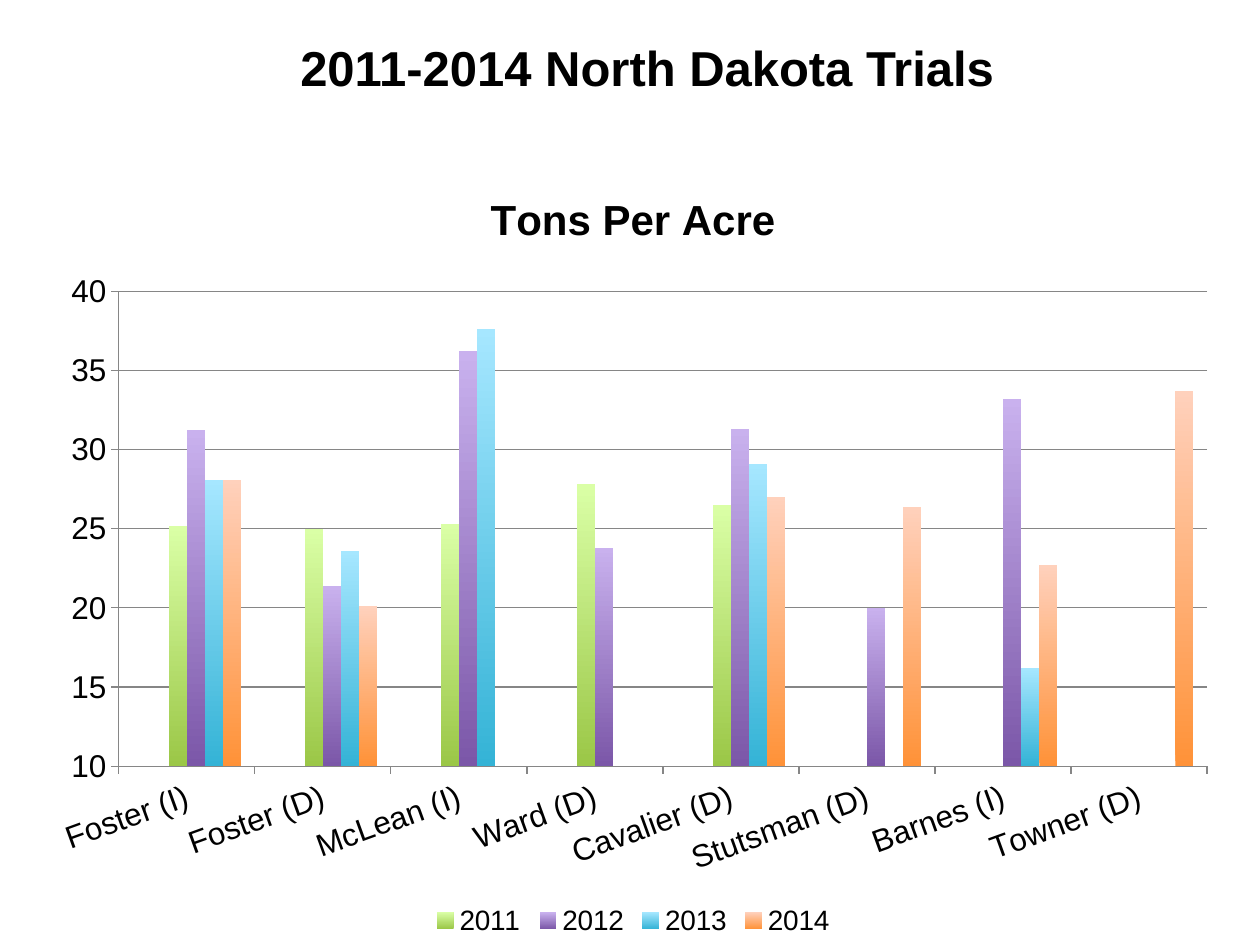
from dataclasses import dataclass

from lxml import etree
from pptx import Presentation
from pptx.chart.data import CategoryChartData
from pptx.dml.color import RGBColor
from pptx.enum import chart as charts, text
from pptx.oxml import parse_xml
from pptx.oxml.ns import nsdecls, qn
from pptx.util import Pt


@dataclass(frozen=True)
class Theme:
    font: str = "Arial"
    ink: str = "000000"
    line: str = "868686"
    title: int = 28
    chart_title: int = 24
    axis: int = 18
    legend: int = 16


THEME = Theme()
COUNTIES = ["Foster (I)", "Foster (D)", "McLean (I)", "Ward (D)",
            "Cavalier (D)", "Stutsman (D)", "Barnes (I)", "Towner (D)"]
# Yields by year, then the bottom and top colour of the bars.
YEARS = {
    "2011": ([25.2, 25, 25.3, 27.8, 26.5, None, None, None], "9BC747", "DAFFA6"),
    "2012": ([31.2, 21.4, 36.2, 23.8, 31.3, 20, 33.2, None], "7B57A8", "C9B1EE"),
    "2013": ([28.1, 23.6, 37.6, None, 29.1, None, 16.2, None], "34B3D6", "A6E7FF"),
    "2014": ([28.1, 20.1, None, None, 27, 26.4, 22.7, 33.7], "FF9238", "FFD1BC"),
}
# Series below the axis minimum, which hold the first two slots of each group.
SPACERS = {"Series 1": "4F81BD", "Series 2": "009900"}


def set_values(target, values):
    for name, value in values.items():
        setattr(target, name, value)


def style_font(font, size, bold=False):
    set_values(font, {"name": THEME.font, "size": Pt(size), "bold": bold})
    font.color.rgb = RGBColor.from_string(THEME.ink)


def style_line(line):
    line.color.rgb = RGBColor.from_string(THEME.line)
    line.width = Pt(0.75)


def add_title(page, box, wording):
    title = page.shapes.title
    set_values(title, dict(zip(("left", "top", "width", "height"), map(Pt, box))))
    frame = title.text_frame
    frame.text = wording
    set_values(frame, {"word_wrap": True,
                       "auto_size": text.MSO_AUTO_SIZE.SHAPE_TO_FIT_TEXT,
                       "vertical_anchor": text.MSO_ANCHOR.MIDDLE})
    para = frame.paragraphs[0]
    para.alignment = text.PP_ALIGN.CENTER
    style_font(para.runs[0].font, THEME.title, bold=True)


def trial_data():
    data = CategoryChartData()
    data.categories = COUNTIES
    for name in SPACERS:
        data.add_series(name, [1])
    for year, (yields, _, _) in YEARS.items():
        data.add_series(year, yields)
    return data


def colour_series(plot):
    for series in plot.series:
        series.invert_if_negative = False
        fill = series.format.fill
        if series.name in SPACERS:
            fill.solid()
            fill.fore_color.rgb = RGBColor.from_string(SPACERS[series.name])
            continue
        fill.gradient()
        fill.gradient_angle = 90
        for stop, colour in zip(fill.gradient_stops, YEARS[series.name][1:]):
            stop.color.rgb = RGBColor.from_string(colour)


def style_axes(chart):
    for axis in (chart.category_axis, chart.value_axis):
        axis.major_tick_mark = charts.XL_TICK_MARK.OUTSIDE
        style_font(axis.tick_labels.font, THEME.axis)
        style_line(axis.format.line)
    set_values(chart.value_axis, {"minimum_scale": 10, "maximum_scale": 40,
                                  "major_unit": 5, "has_major_gridlines": True})
    style_line(chart.value_axis.major_gridlines.format.line)
    labels = chart.category_axis.tick_labels.font
    slant = chart._chartSpace.find(".//" + qn("c:catAx")).find(
        qn("c:txPr")).find(qn("a:bodyPr"))
    slant.set("rot", str(-20 * 60000))
    labels.bold = False


def add_legend(chart):
    chart.has_legend = True
    legend = chart.legend
    set_values(legend, {"position": charts.XL_LEGEND_POSITION.BOTTOM,
                        "include_in_layout": False})
    style_font(legend.font, THEME.legend)
    position = legend._element.find(qn("c:legendPos"))
    for index in reversed(range(len(SPACERS))):
        position.addnext(parse_xml(
            f'<c:legendEntry {nsdecls("c")}><c:idx val="{index}"/>'
            '<c:delete val="1"/></c:legendEntry>'))


def place_plot(chart, x, y, w, h):
    """Set the inner plot area as fractions of the chart."""
    area = chart._chartSpace.find(".//" + qn("c:plotArea"))
    for old in area.findall(qn("c:layout")):
        area.remove(old)
    layout = etree.Element(qn("c:layout"))
    manual = etree.SubElement(layout, qn("c:manualLayout"))
    values = {"layoutTarget": "inner", "xMode": "edge", "yMode": "edge",
              "x": x, "y": y, "w": w, "h": h}
    for name, value in values.items():
        etree.SubElement(manual, qn(f"c:{name}")).set("val", str(value))
    area.insert(0, layout)


def add_yield_chart(page, box):
    chart = page.shapes.add_chart(charts.XL_CHART_TYPE.COLUMN_CLUSTERED,
                                  *map(Pt, box), trial_data()).chart
    style_font(chart.font, 10)
    chart.has_title = True
    frame = chart.chart_title.text_frame
    frame.text = "Tons Per Acre"
    style_font(frame.paragraphs[0].runs[0].font, THEME.chart_title, bold=True)
    plot = chart.plots[0]
    set_values(plot, {"gap_width": 150, "overlap": 0, "vary_by_categories": False})
    colour_series(plot)
    style_axes(chart)
    add_legend(chart)
    place_plot(chart, 0.07, 0.165, 0.91, 0.61)


def main():
    deck = Presentation()
    set_values(deck, {"slide_width": Pt(720), "slide_height": Pt(540)})
    page = deck.slides.add_slide(deck.slide_layouts[5])
    add_title(page, (36, 18, 667.5, 41), "2011-2014 North Dakota Trials")
    add_yield_chart(page, (20, 93, 683.5, 445))
    deck.save("out.pptx")


if __name__ == "__main__":
    main()
